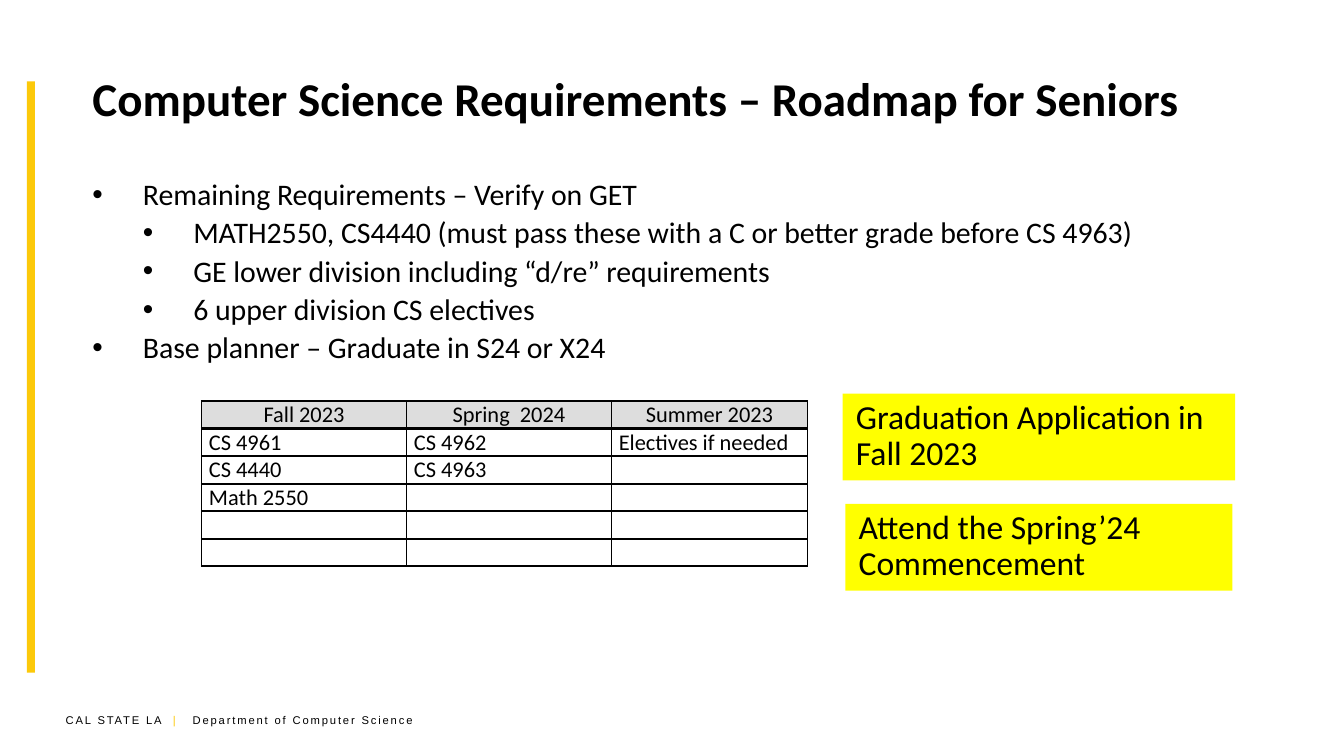
from lxml import etree
from pptx import Presentation
from pptx import util as u
from pptx.dml.color import RGBColor
from pptx.enum import shapes, text
from pptx.oxml.ns import qn

PX = 4572  # EMU per px, 200 px to the inch
BLACK, GOLD, YELLOW, GREY = "000000", "FCC90A", "FFFF00", "DDDDDD"


def color(target, value):
    """Give a fill or a font a solid hex colour."""
    if hasattr(target, "solid"):
        target.solid()
        target.fore_color.rgb = RGBColor.from_string(value)
    else:
        target.color.rgb = RGBColor.from_string(value)


def write(paragraph, content, size, font="Calibri", value=BLACK, bold=False,
          align=None, line=None, before=None, tracking=None):
    """Add a formatted run to a paragraph."""
    if align is not None:
        paragraph.alignment = align
    if line is not None:
        paragraph.line_spacing = line
    if before is not None:
        paragraph.space_before = u.Pt(before)
    run = paragraph.add_run()
    run.text = content
    run.font.size, run.font.name, run.font.bold = u.Pt(size), font, bold
    color(run.font, value)
    if tracking is not None:
        run.font._element.set("spc", str(tracking))


presentation = Presentation()
presentation.slide_width, presentation.slide_height = 2000 * PX, 1125 * PX
slide = presentation.slides.add_slide(presentation.slide_layouts[6])

# Text boxes: footer, title, body
frames = []
for box in [(78, 1052, 584, 40), (118, 52, 1780, 188), (118, 258, 1780, 742)]:
    frame = slide.shapes.add_textbox(*(n * PX for n in box)).text_frame
    frame.word_wrap = True
    frames.append(frame)
footer, title, body = frames

# Footer, with a tab stop before the department
paragraph = footer.paragraphs[0]
tabs = etree.SubElement(paragraph._p.get_or_add_pPr(), qn("a:tabLst"))
etree.SubElement(tabs, qn("a:tab"), pos=str(189 * PX), algn="l")
for content, value in [("CAL STATE LA ", BLACK), (" |\t", GOLD),
                       ("Department of Computer Science", BLACK)]:
    write(paragraph, content, 6, font="Arial", value=value, tracking=100)

# Gold bar, a long strip turned upright
bar = slide.shapes.add_shape(shapes.MSO_SHAPE.RECTANGLE,
                             -394 * PX, 555 * PX, 880 * PX, 12 * PX)
bar.rotation = 90
bar.shadow.inherit = False
color(bar.fill, GOLD)
bar.line.fill.background()

# Title
title.vertical_anchor = text.MSO_ANCHOR.MIDDLE
write(title.paragraphs[0], "Computer Science Requirements – Roadmap for Seniors",
      25.2, bold=True)

# Bulleted requirements
bullets = [
    (0, "Remaining Requirements – Verify on GET"),
    (1, "MATH2550, CS4440 (must pass these with a C or better grade before CS 4963)"),
    (1, "GE lower division including “d/re” requirements"),
    (1, "6 upper division CS electives"),
    (0, "Base planner – Graduate in S24 or X24"),
]
indent = 75 * PX
for i, (level, content) in enumerate(bullets):
    paragraph = body.add_paragraph() if i else body.paragraphs[0]
    paragraph.level = level
    properties = paragraph._p.get_or_add_pPr()
    properties.set("marL", str(indent * (level + 1)))
    properties.set("indent", str(-indent))
    etree.SubElement(properties, qn("a:buFont"), typeface="Arial")
    etree.SubElement(properties, qn("a:buChar"), char="•")
    write(paragraph, content, 16, line=0.9, before=3.2 if i else 0)

# Planner table
rows = [
    ["Fall 2023", "Spring  2024", "Summer 2023"],
    ["CS 4961", "CS 4962", "Electives if needed"],
    ["CS 4440", "CS 4963", ""],
    ["Math 2550", "", ""],
    ["", "", ""],
    ["", "", ""],
]
widths = [305, 305, 292]
row_height = 41
table = slide.shapes.add_table(len(rows), len(widths), 300 * PX, 597 * PX,
                               sum(widths) * PX, row_height * len(rows) * PX).table
table.first_row = table.horz_banding = False
for column, width in zip(table.columns, widths):
    column.width = width * PX
for r, row in enumerate(rows):
    table.rows[r].height = row_height * PX
    for c, content in enumerate(row):
        cell = table.cell(r, c)
        cell.margin_left = cell.margin_right = 11 * PX
        cell.margin_top = cell.margin_bottom = 0
        cell.vertical_anchor = text.MSO_ANCHOR.MIDDLE
        paragraph = cell.text_frame.paragraphs[0]
        if content:
            write(paragraph, content, 12,
                  align=text.PP_ALIGN.LEFT if r else text.PP_ALIGN.CENTER)
        else:
            etree.SubElement(paragraph._p, qn("a:endParaRPr"), sz="1200")
        # Borders come before the fill in the cell properties
        properties = cell._tc.get_or_add_tcPr()
        for side in ("lnL", "lnR", "lnT", "lnB"):
            thick = (r, side) in [(0, "lnB"), (1, "lnT")]
            border = etree.SubElement(properties, qn("a:" + side),
                                      w=str(u.Pt(1.5 if thick else 1)))
            fill = etree.SubElement(border, qn("a:solidFill"))
            etree.SubElement(fill, qn("a:srgbClr"), val=BLACK)
        if r:
            cell.fill.background()
        else:
            color(cell.fill, GREY)

# Yellow reminders
for left, top, width, content in [
    (1254, 586, 584, "Graduation Application in Fall 2023"),
    (1258, 750, 576, "Attend the Spring’24 Commencement"),
]:
    reminder = slide.shapes.add_shape(shapes.MSO_SHAPE.RECTANGLE,
                                      left * PX, top * PX, width * PX, 129 * PX)
    reminder.shadow.inherit = False
    color(reminder.fill, YELLOW)
    reminder.line.fill.background()
    reminder.text_frame.word_wrap = True
    reminder.text_frame.vertical_anchor = text.MSO_ANCHOR.TOP
    write(reminder.text_frame.paragraphs[0], content, 18,
          align=text.PP_ALIGN.LEFT, line=0.9)

presentation.save("out.pptx")
